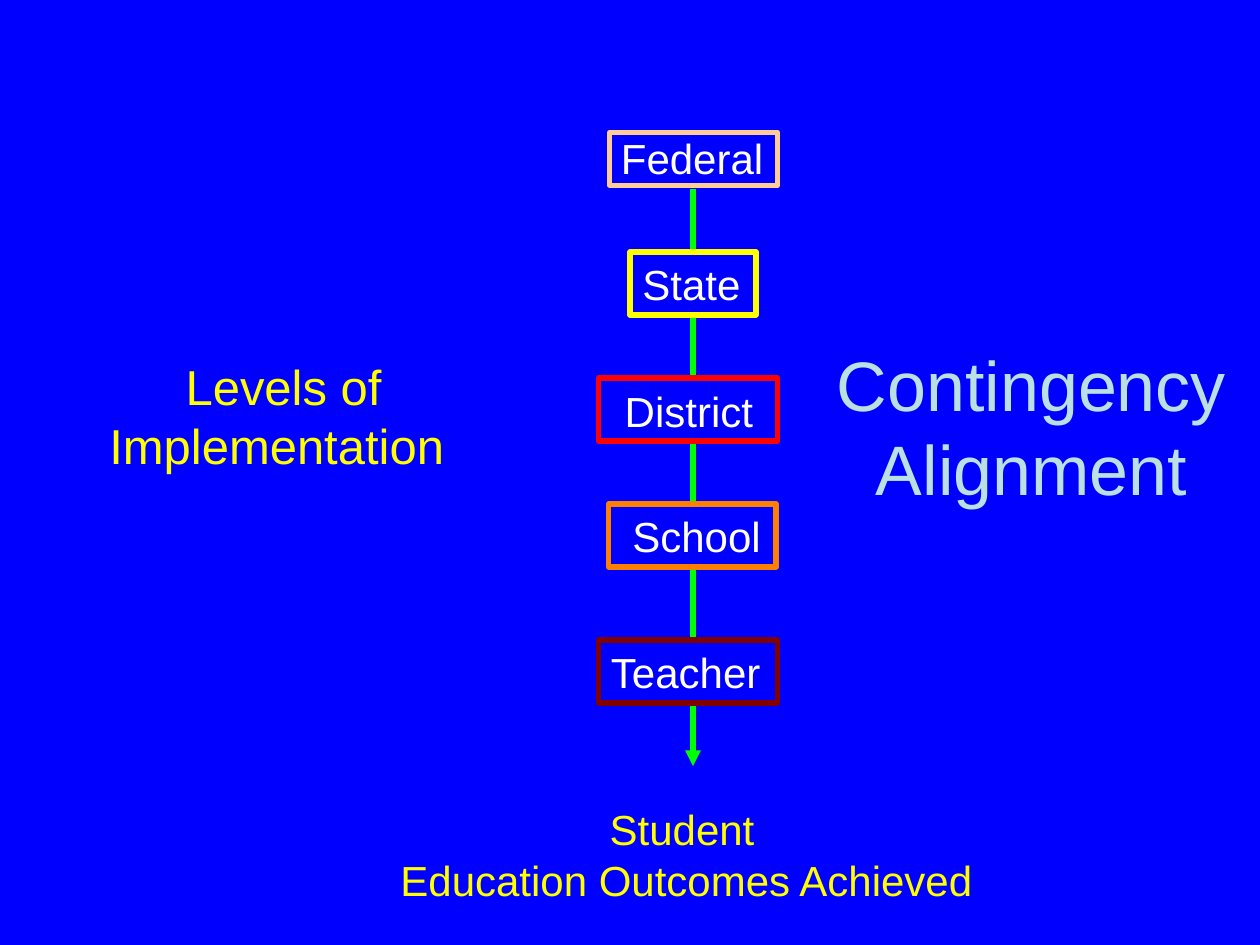
from dataclasses import dataclass

from pptx import Presentation
from pptx.dml.color import RGBColor
from pptx.enum.shapes import MSO_CONNECTOR, MSO_SHAPE
from pptx.enum.text import MSO_ANCHOR, PP_ALIGN
from pptx.oxml.ns import qn
from pptx.util import Inches, Pt
from lxml import etree


@dataclass(frozen=True)
class Theme:
    font: str = "Arial"
    background: str = "0000FF"
    arrow: str = "00FF00"
    label: str = "FFFFFF"
    accent: str = "FFFF00"
    heading: str = "BBE0E3"
    body_size: int = 24
    levels_size: int = 28
    heading_size: int = 40
    line_width: int = 3


def rgb(value):
    return RGBColor.from_string(value)


class SlideBuilder:
    def __init__(self, slide, theme):
        self.slide = slide
        self.theme = theme
        fill = slide.background.fill
        fill.solid()
        fill.fore_color.rgb = rgb(theme.background)

    def arrow(self, x, top, bottom):
        shaft = self.slide.shapes.add_connector(
            MSO_CONNECTOR.STRAIGHT, Inches(x), Inches(top), Inches(x), Inches(bottom))
        shaft.line.color.rgb = rgb(self.theme.arrow)
        shaft.line.width = Pt(self.theme.line_width)
        etree.SubElement(shaft.line._get_or_add_ln(), qn("a:tailEnd"), type="triangle")
        etree.SubElement(shaft._element.spPr, qn("a:effectLst"))

    def frame(self, left, top, width, height, color):
        border = self.slide.shapes.add_shape(
            MSO_SHAPE.RECTANGLE, Inches(left), Inches(top), Inches(width), Inches(height))
        border.shadow.inherit = False
        border.fill.solid()
        border.fill.fore_color.rgb = rgb(self.theme.background)
        border.line.color.rgb = rgb(color)
        border.line.width = Pt(self.theme.line_width)

    def text(self, left, top, width, height, wording, size, color,
             alignments=(PP_ALIGN.LEFT,), anchor=MSO_ANCHOR.TOP):
        """Add a text box; alignments holds one entry per paragraph."""
        box = self.slide.shapes.add_textbox(
            Inches(left), Inches(top), Inches(width), Inches(height))
        body = box.text_frame
        body.word_wrap = True
        body.vertical_anchor = anchor
        body.text = wording
        for paragraph, alignment in zip(body.paragraphs, alignments):
            paragraph.alignment = alignment
            for run in paragraph.runs:
                run.font.name = self.theme.font
                run.font.size = Pt(size)
                run.font.color.rgb = rgb(color)


# name, border colour, frame (left, top, width, height), label (left, top, width)
LEVELS = [
    ("Federal", "FFCC99", (4.84, 1.05, 1.33, 0.42), (4.83, 1, 1.33)),
    ("State", "FFFF00", (5, 2, 1, 0.5), (5, 2, 0.98)),
    ("District", "FF0000", (4.75, 3, 1.42, 0.5), (4.86, 3.01, 1.22)),
    ("School", "FF8000", (4.83, 4, 1.33, 0.5), (4.92, 4, 1.22)),
    ("Teacher", "800000", (4.75, 5.08, 1.42, 0.5), (4.75, 5.08, 1.42)),
]
LABEL_HEIGHT = 0.5


def main():
    presentation = Presentation()
    presentation.slide_width = Inches(10)
    presentation.slide_height = Inches(7.5)
    theme = Theme()
    slide = presentation.slides.add_slide(presentation.slide_layouts[6])
    builder = SlideBuilder(slide, theme)

    builder.arrow(5.5, 1.5, 6.08)
    for name, color, frame, label in LEVELS:
        builder.frame(*frame, color)
        builder.text(*label, LABEL_HEIGHT, name, theme.body_size, theme.label)

    center = PP_ALIGN.CENTER
    builder.text(3.08, 6.33, 4.76, 0.9, "Student \nEducation Outcomes Achieved",
                 theme.body_size, theme.accent, (center, PP_ALIGN.LEFT))
    builder.text(6.54, 2.66, 3.29, 1.43, "Contingency\nAlignment",
                 theme.heading_size, theme.heading, (center, center))
    builder.text(0.75, 2.67, 3, 1.25, "Levels of Implementation ",
                 theme.levels_size, theme.accent, (center,), MSO_ANCHOR.MIDDLE)

    presentation.save("out.pptx")


if __name__ == "__main__":
    main()
